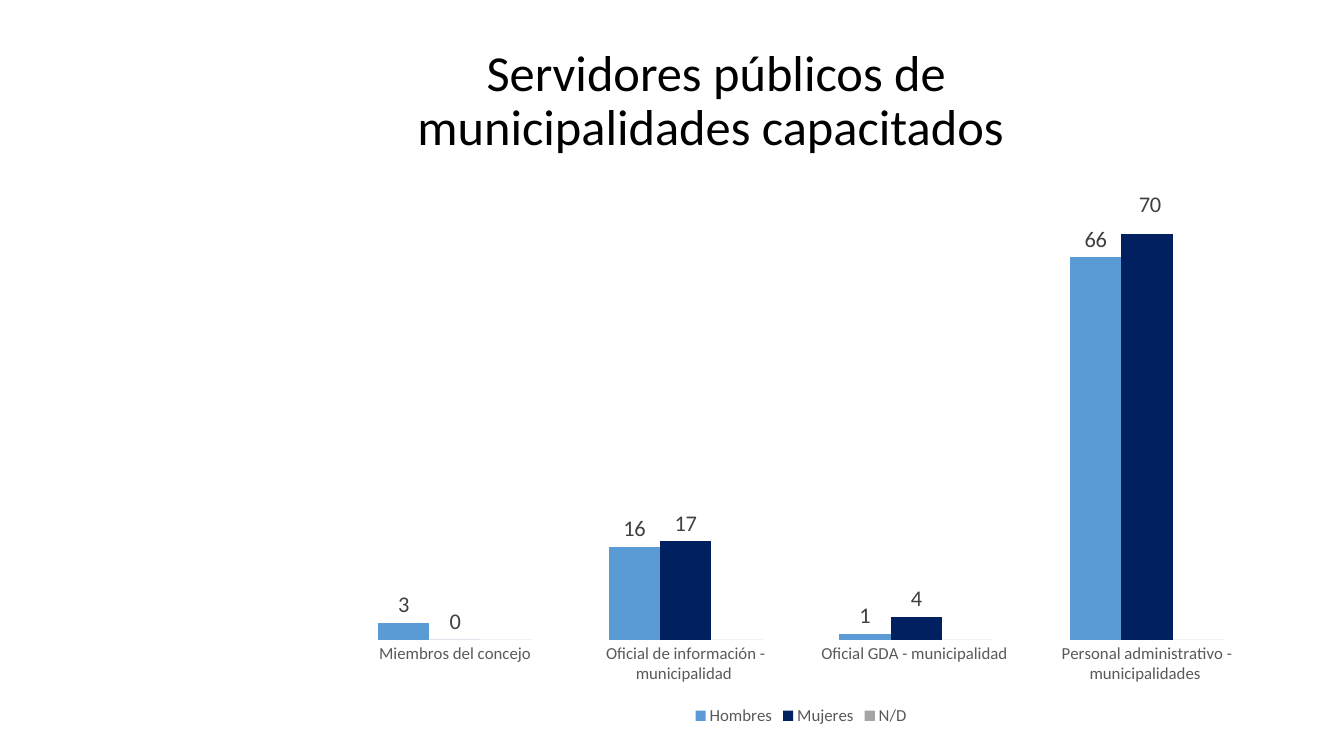
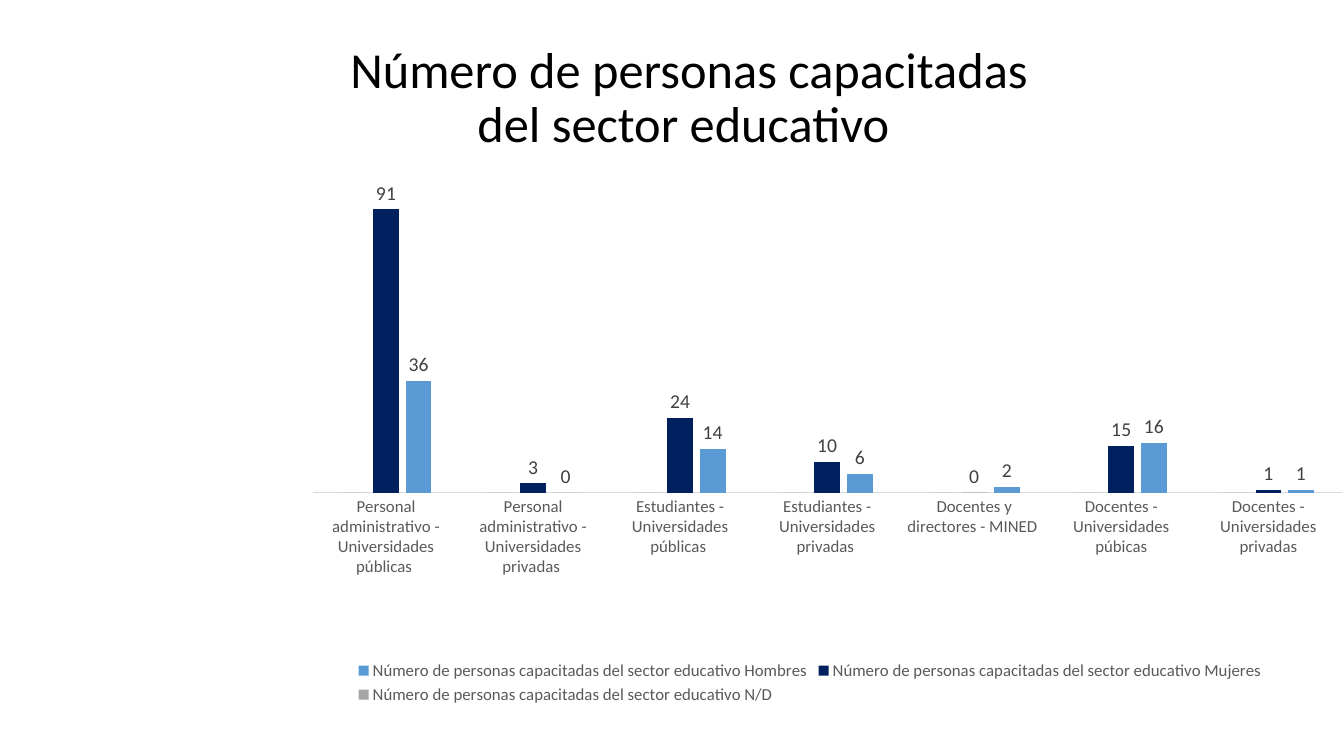
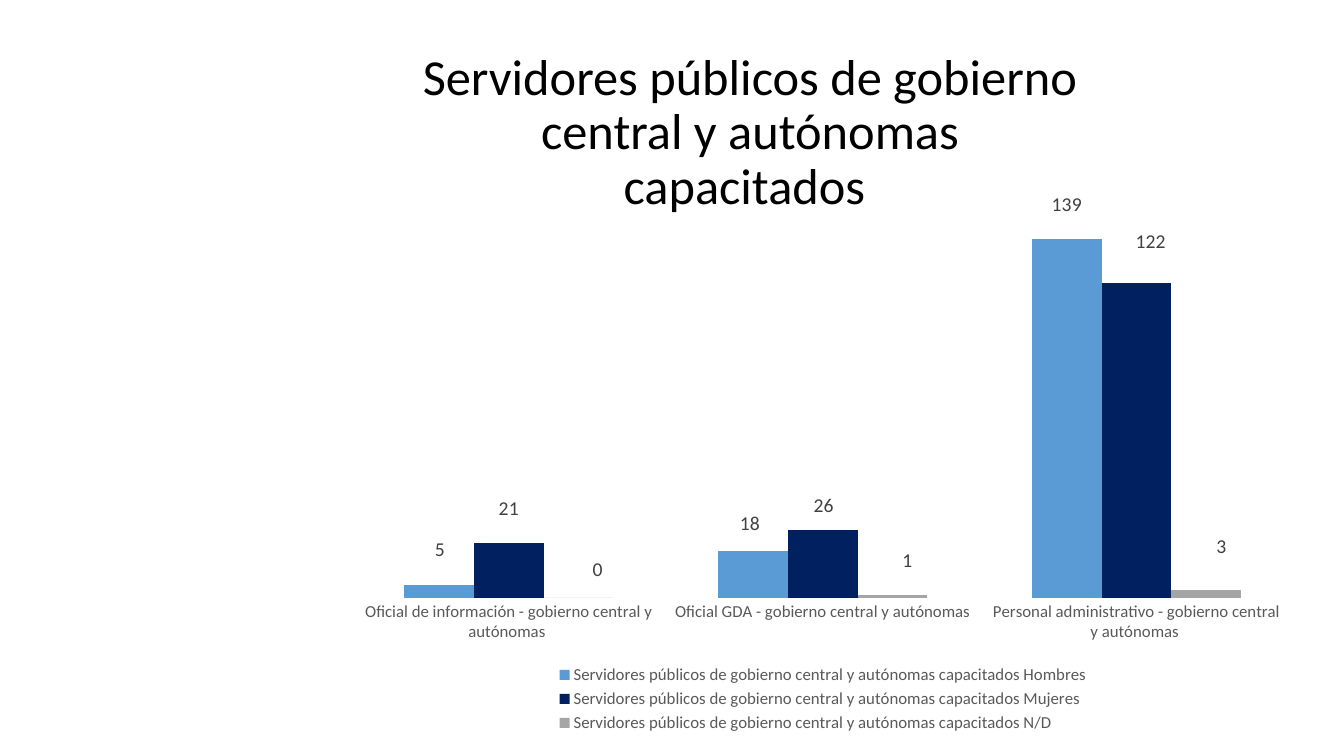
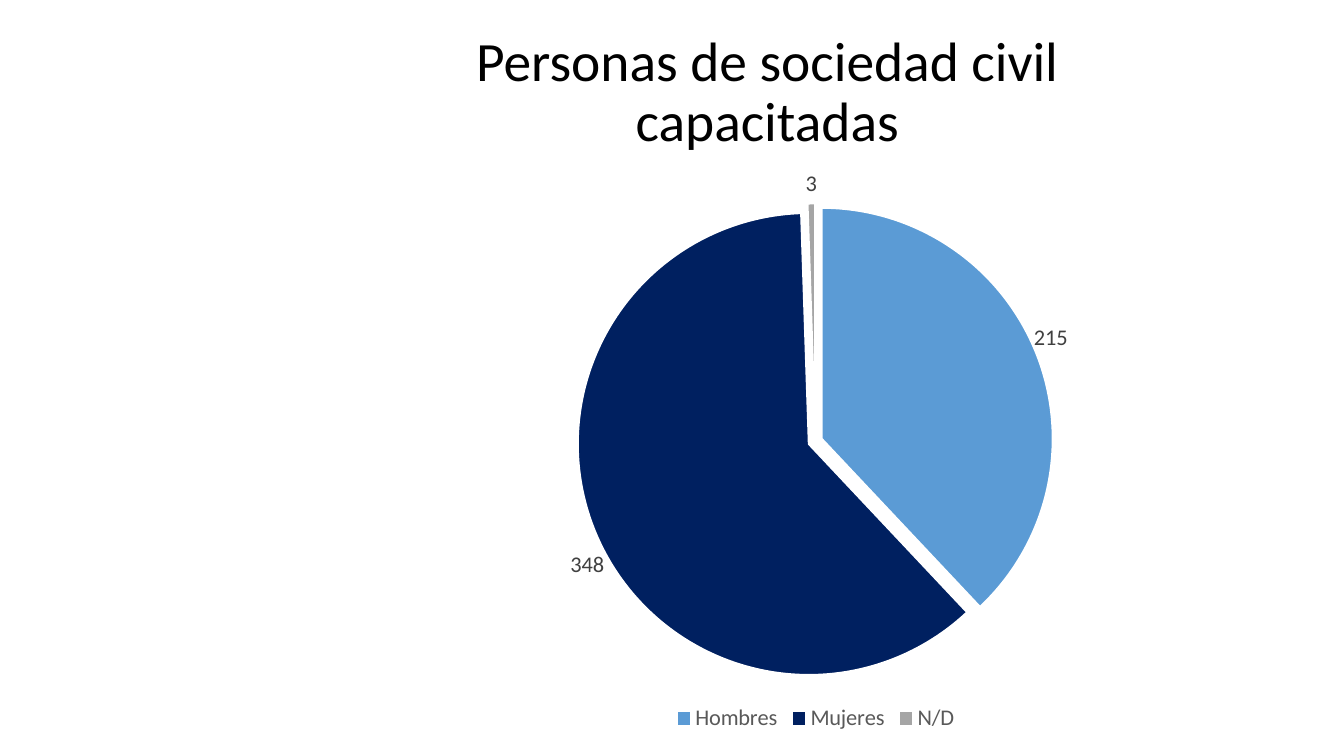
from lxml.etree import SubElement
from pptx import Presentation
from pptx.chart.data import CategoryChartData
from pptx.dml.color import RGBColor
from pptx.enum.chart import XL_CHART_TYPE, XL_LABEL_POSITION, XL_LEGEND_POSITION, XL_TICK_LABEL_POSITION, XL_TICK_MARK
from pptx.enum.text import MSO_ANCHOR, PP_ALIGN
from pptx.oxml import parse_xml
from pptx.oxml.ns import nsdecls, qn
from pptx.util import Pt

PIXEL = 9144


def color(value):
    return RGBColor.from_string(value)


class Deck:
    """Holds the shared style, the presentation and the current slide."""

    font_name = "Calibri"
    title_color = "000000"
    text_color = "595959"
    label_color = "404040"
    border_color = "FFFFFF"
    series_colors = ("5B9BD5", "002060", "A5A5A5")

    def __init__(self):
        self.presentation = Presentation()
        self.presentation.slide_width = 1333 * PIXEL
        self.presentation.slide_height = 750 * PIXEL
        self.slide = None

    def new_slide(self):
        self.slide = self.presentation.slides.add_slide(self.presentation.slide_layouts[6])

    def style_font(self, font, size, value):
        font.name = self.font_name
        font.size = Pt(size)
        font.color.rgb = color(value)

    def title(self, text, box, size=36):
        frame = self.slide.shapes.add_textbox(*[length * PIXEL for length in box]).text_frame
        frame.word_wrap = True
        frame.vertical_anchor = MSO_ANCHOR.MIDDLE
        frame.text = text
        paragraph = frame.paragraphs[0]
        paragraph.alignment = PP_ALIGN.CENTER
        paragraph.line_spacing = 0.9
        self.style_font(paragraph.runs[0].font, size, self.title_color)

    def chart(self, kind, box, categories, series, legend_size):
        data = CategoryChartData()
        data.categories = categories
        for name, values in series:
            data.add_series(name, values)
        frame = self.slide.shapes.add_chart(kind, *[length * PIXEL for length in box], data)
        chart = frame.chart
        chart.has_title = False
        for blanks in chart._chartSpace.iter(qn("c:dispBlanksAs")):
            blanks.set("val", "zero")
        self.style_font(chart.font, legend_size, self.text_color)
        chart.has_legend = True
        chart.legend.position = XL_LEGEND_POSITION.BOTTOM
        chart.legend.include_in_layout = False
        self.style_font(chart.legend.font, legend_size, self.text_color)
        return chart

    def manual_layout(self, **settings):
        layout = parse_xml(f"<c:layout {nsdecls('c')}/>")
        manual = SubElement(layout, qn("c:manualLayout"))
        for name, value in settings.items():
            SubElement(manual, qn(f"c:{name}")).set("val", str(value))
        return layout

    def place_plot(self, chart, box, area):
        plot_area = chart._chartSpace.chart.plotArea
        for layout in plot_area.findall(qn("c:layout")):
            plot_area.remove(layout)
        x, y, width, height = area
        plot_area.insert(0, self.manual_layout(
            layoutTarget="inner", xMode="edge", yMode="edge",
            x=x / box[2], y=y / box[3], w=width / box[2], h=height / box[3]))

    def labels(self, series, size, box, offsets):
        labels = series.data_labels
        labels.show_value = True
        labels.position = XL_LABEL_POSITION.OUTSIDE_END
        self.style_font(labels.font, size, self.label_color)
        for leader in labels._element.iter(qn("c:showLeaderLines")):
            leader.set("val", "0")
        for index, (x, y) in offsets.items():
            label = series.points[index].data_label
            label.position = XL_LABEL_POSITION.OUTSIDE_END
            self.style_font(label.font, size, self.label_color)
            element = labels._element.xpath(f"c:dLbl[c:idx/@val='{index}']")[0]
            element.find(qn("c:idx")).addnext(self.manual_layout(x=x / box[2], y=y / box[3]))

    def column_chart(self, box, categories, series, area, maximum, label_size, labelled=2,
                     offsets=None, gap=150, overlap=0, reverse=False, axis_line=None):
        chart = self.chart(XL_CHART_TYPE.COLUMN_CLUSTERED, box, categories, series, 12)
        self.place_plot(chart, box, area)
        plot = chart.plots[0]
        plot.vary_by_categories = False
        plot.gap_width = gap
        plot.overlap = overlap
        for index, column in enumerate(plot.series):
            column.format.fill.solid()
            column.format.fill.fore_color.rgb = color(self.series_colors[index])
            column.invert_if_negative = False
            if index < labelled:
                self.labels(column, label_size, box, (offsets or {}).get(index, {}))
        value_axis = chart.value_axis
        value_axis.minimum_scale = 0
        value_axis.maximum_scale = maximum
        value_axis.has_major_gridlines = False
        value_axis.visible = False
        category_axis = chart.category_axis
        category_axis.major_tick_mark = XL_TICK_MARK.NONE
        category_axis.tick_label_position = XL_TICK_LABEL_POSITION.NEXT_TO_AXIS
        category_axis.reverse_order = reverse
        self.style_font(category_axis.tick_labels.font, 12, self.text_color)
        line = category_axis.format.line
        if axis_line:
            line.color.rgb = color(axis_line)
            line.width = Pt(0.75)
        else:
            line.fill.background()

    def pie_chart(self, box, categories, series, label_size, explosion, offsets):
        chart = self.chart(XL_CHART_TYPE.PIE, box, categories, [series], label_size)
        plot = chart.plots[0]
        plot.vary_by_categories = True
        pie = plot.series[0]
        pie._element.find(qn("c:tx")).addnext(
            parse_xml(f'<c:explosion {nsdecls("c")} val="{explosion}"/>'))
        for index, value in enumerate(self.series_colors):
            point_format = pie.points[index].format
            point_format.fill.solid()
            point_format.fill.fore_color.rgb = color(value)
            point_format.line.color.rgb = color(self.border_color)
            point_format.line.width = Pt(1.5)
        self.labels(pie, label_size, box, offsets)


def main():
    deck = Deck()
    groups = ("Hombres", "Mujeres", "N/D")

    deck.new_slide()
    deck.title("Servidores públicos de municipalidades capacitados ", (318, 40, 785, 123))
    deck.column_chart(
        (318, 163, 953, 561),
        ("Miembros del concejo", "Oficial de información - municipalidad ",
         "Oficial GDA - municipalidad ", "Personal administrativo - municipalidades "),
        list(zip(groups, ((3, 16, 1, 66), (None, 17, 4, 70), (None,) * 4))),
        area=(19, 12, 915, 460), maximum=80, label_size=16,
        offsets={1: {3: (3, -11)}})

    deck.new_slide()
    topic = "Número de personas capacitadas del sector educativo "
    deck.title(topic, (301, 37, 765, 123))
    deck.column_chart(
        (264, 161, 1079, 542),
        ("Docentes - Universidades privadas", "Docentes - Universidades púbicas",
         "Docentes y directores - MINED ", "Estudiantes - Universidades privadas ",
         "Estudiantes - Universidades públicas ",
         "Personal administrativo - Universidades privadas ",
         "Personal administrativo - Universidades públicas "),
        list(zip([topic + group for group in groups],
                 ((1, 16, 2, 6, 14, None, 36), (1, 15, None, 10, 24, 3, 91), (None,) * 7))),
        area=(46, 19, 1021, 309), maximum=100, label_size=14,
        gap=219, overlap=-27, reverse=True, axis_line="D9D9D9")

    deck.new_slide()
    topic = "Servidores públicos de gobierno central y autónomas capacitados "
    deck.title(topic, (407, 71, 674, 123))
    deck.column_chart(
        (330, 172, 973, 559),
        ("Oficial de información - gobierno central y autónomas ",
         "Oficial GDA - gobierno central y autónomas",
         "Personal administrativo - gobierno central y autónomas "),
        list(zip([topic + group for group in groups],
                 ((5, 18, 139), (21, 26, 122), (None, 1, 3)))),
        area=(19, 11, 934, 410), maximum=160, label_size=14, labelled=3,
        offsets={0: {0: (1, -19), 1: (-3, -11), 2: (0, -18)},
                 1: {0: (0, -19), 1: (1, -9), 2: (14, -25)},
                 2: {0: (19, -12), 1: (15, -18), 2: (15, -27)}})

    deck.new_slide()
    deck.title("Personas de sociedad civil capacitadas", (424, 31, 674, 123), 39.6)
    deck.pie_chart((316, 155, 986, 576), groups, ("Series 1", (215, 348, 3)),
                   label_size=16, explosion=3, offsets={0: (-8, 0), 1: (14, 16)})

    deck.presentation.save("out.pptx")


if __name__ == "__main__":
    main()
